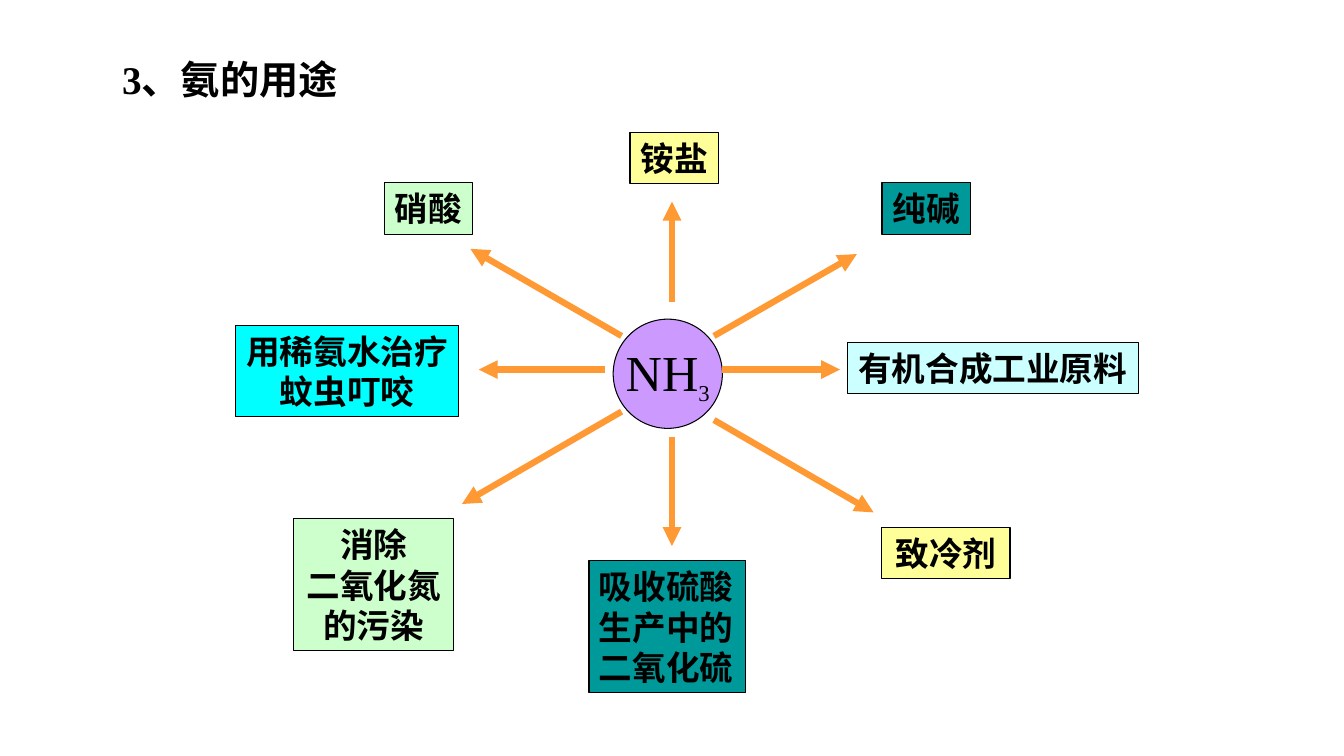
from lxml import etree
from pptx import Presentation
from pptx.dml.color import RGBColor
from pptx.enum.shapes import MSO_CONNECTOR, MSO_SHAPE
from pptx.enum.text import MSO_ANCHOR, MSO_AUTO_SIZE, PP_ALIGN
from pptx.oxml.ns import qn
from pptx.util import Pt

PX = 9525
SLIDE_BOX = (0, 0, 1280, 720)
FONT = "Times New Roman"
RECTANGLE, OVAL = MSO_SHAPE.RECTANGLE, MSO_SHAPE.OVAL
STRAIGHT = MSO_CONNECTOR.STRAIGHT
LEFT, CENTER = PP_ALIGN.LEFT, PP_ALIGN.CENTER
MIDDLE, TOP = MSO_ANCHOR.MIDDLE, MSO_ANCHOR.TOP
GROW, FIXED = MSO_AUTO_SIZE.SHAPE_TO_FIT_TEXT, MSO_AUTO_SIZE.NONE

COLORS = {
    "black": "000000", "purple": "CC99FF", "green": "CCFFCC", "yellow": "FFFF99",
    "teal": "009999", "ice": "CCFFFF", "cyan": "00FFFF", "orange": "FF9933",
}

USES = [
    (["硝酸"], "green", (366, 174, 84, 49), {}),
    (["铵盐"], "yellow", (600, 126, 84, 49), {}),
    (["纯碱"], "teal", (840, 174, 84, 49), {}),
    (["有机合成工业原料"], "ice", (807, 326, 277, 49), {}),
    (["用稀氨水治疗", "蚊虫叮咬"], "cyan", (224, 310, 213, 87), {}),
    (["消除", "二氧化氮", "的污染"], "green", (280, 494, 152, 126), {"wrap": True}),
    (["吸收硫酸", "生产中的", "二氧化硫"], "teal", (561, 534, 149, 126), {"align": LEFT}),
    (["致冷剂"], "yellow", (840, 502, 122, 49), {"wrap": True}),
]

ARROWS = [
    ((640, 288), (640, 192)), ((680, 320), (816, 242)),
    ((688, 352), (800, 352)), ((576, 352), (456, 352)),
    ((592, 320), (448, 237)), ((680, 400), (832, 488)),
    ((640, 416), (640, 520)), ((592, 392), (440, 480)),
]


def color(name):
    """Return the named colour."""
    return RGBColor.from_string(COLORS[name])


def place(box, left, top, width, height):
    """Return EMU bounds of a part measured from the corner of a box."""
    return [(box[0] + left) * PX, (box[1] + top) * PX, width * PX, height * PX]


def add_run(paragraph, text, size=24, bold=False, baseline=None):
    """Append one formatted run to a paragraph."""
    run = paragraph.add_run()
    run.text = text
    run.font.name = FONT
    run.font.size = Pt(size)
    run.font.bold = bold
    run.font.color.rgb = color("black")
    if baseline is not None:
        run.font._element.set("baseline", str(baseline * 1000))


def set_text(shape, lines, align=CENTER, anchor=MIDDLE, wrap=False, grow=GROW, **run_format):
    """Fill a shape with one paragraph per line."""
    frame = shape.text_frame
    frame.word_wrap = wrap
    frame.auto_size = grow
    frame.vertical_anchor = anchor
    for index, line in enumerate(lines):
        paragraph = frame.add_paragraph() if index else frame.paragraphs[0]
        paragraph.alignment = align
        add_run(paragraph, line, **run_format)


def add_outlined(slide, kind, bounds, fill):
    """Add a filled shape with a thin black outline."""
    shape = slide.shapes.add_shape(kind, *bounds)
    shape.shadow.inherit = False
    shape.fill.solid()
    shape.fill.fore_color.rgb = color(fill)
    shape.line.color.rgb = color("black")
    shape.line.width = Pt(0.75)
    return shape


def add_arrow(slide, box, start, end):
    """Add an orange arrow between two points of a box."""
    points = [(box[axis] + point[axis]) * PX for point in (start, end) for axis in (0, 1)]
    arrow = slide.shapes.add_connector(STRAIGHT, *points)
    arrow.line.color.rgb = color("orange")
    arrow.line.width = Pt(4.5)
    etree.SubElement(arrow.line._get_or_add_ln(), qn("a:tailEnd"), type="triangle")
    etree.SubElement(arrow._element.spPr, qn("a:effectLst"))


def add_title(slide, box):
    """Add the heading in a box."""
    title = slide.shapes.add_textbox(*place(box, 0, 0, box[2], box[3]))
    set_text(title, ["3、氨的用途"], align=LEFT, anchor=TOP, size=28, bold=True)


def add_ammonia(slide, box):
    """Add the central formula circle in a box."""
    circle = add_outlined(slide, OVAL, place(box, 0, 0, box[2], box[3]), "purple")
    set_text(circle, ["NH"], grow=FIXED, size=36)
    add_run(circle.text_frame.paragraphs[0], "3", size=28, baseline=-25)


def add_uses(slide, box):
    """Add the use labels and the arrows that lead to them."""
    for lines, fill, bounds, text_format in USES:
        label = add_outlined(slide, RECTANGLE, place(box, *bounds), fill)
        set_text(label, lines, bold=True, **text_format)
    for start, end in ARROWS:
        add_arrow(slide, box, start, end)


def main():
    """Build and save the slide."""
    presentation = Presentation()
    presentation.slide_width = SLIDE_BOX[2] * PX
    presentation.slide_height = SLIDE_BOX[3] * PX
    slide = presentation.slides.add_slide(presentation.slide_layouts[6])
    add_ammonia(slide, (584, 304, 104, 104))
    add_uses(slide, SLIDE_BOX)
    add_title(slide, (107, 48, 235, 55))
    presentation.save("out.pptx")


if __name__ == "__main__":
    main()
